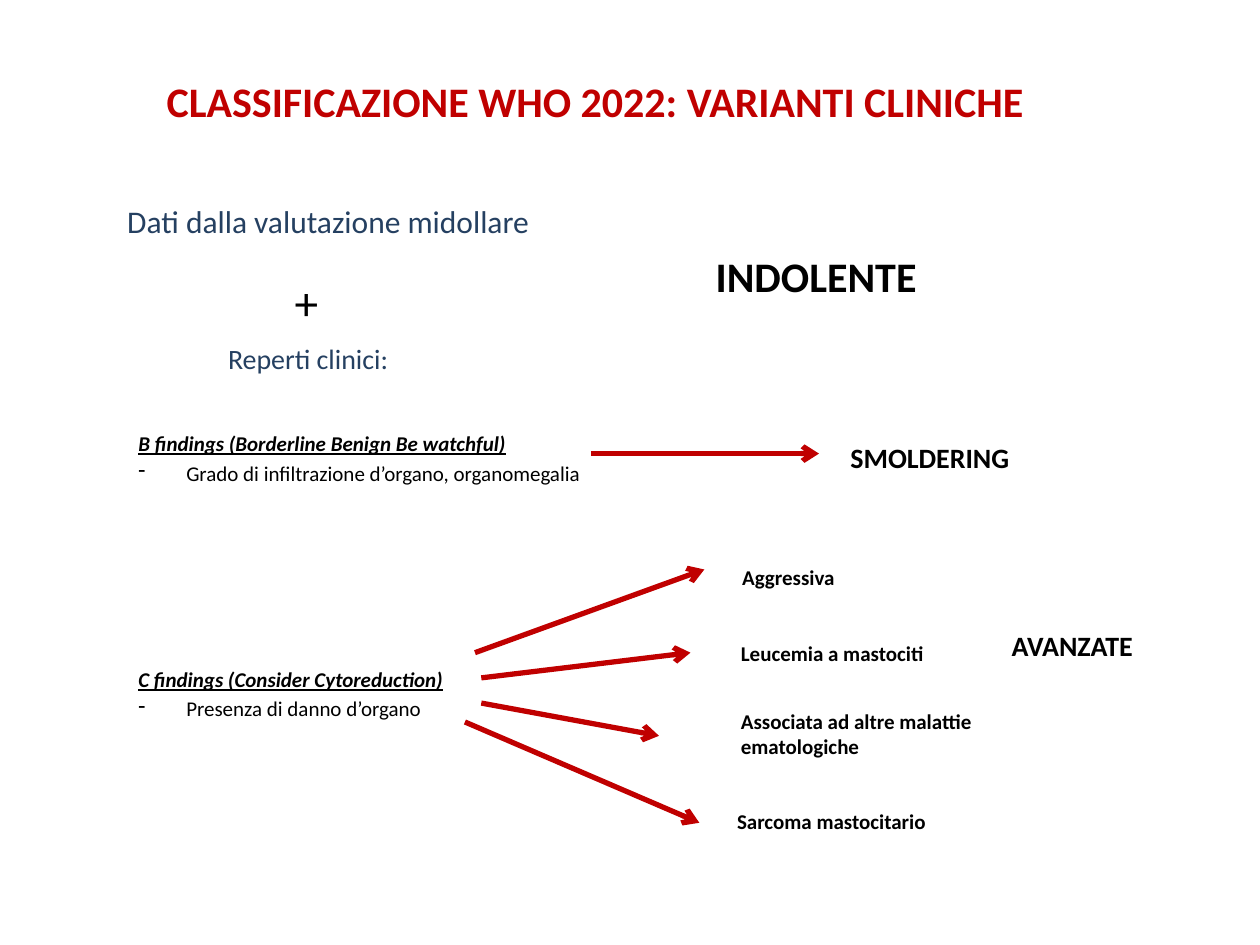
from lxml import etree
from pptx import Presentation, util as u
from pptx.dml.color import RGBColor
from pptx.enum import shapes, text
from pptx.oxml import ns

COLORS = {"red": "C00000", "navy": "254061", "black": "000000"}
FONT = "Calibri"
HANGING = 0.38

# Insets: left, top, right, bottom
STANDARD = (0.1, 0.05, 0.1, 0.05)
LABEL = (0.07, 0.04, 0.07, 0.04)
SHIFTED = (-0.04, -0.04, 0, 0)

TITLE = ("CLASSIFICAZIONE WHO 2022: VARIANTI CLINICHE", (1.05, 0.55, 7.35, 0.5))
PLUS = ("+", (2.24, 2.12, 0.39, 0.56))
INPUTS = [  # wording, box, size
    ("Dati dalla valutazione midollare", (1.05, 1.67, 3.78, 0.24), 18),
    ("Reperti clinici:", (1.85, 2.78, 1.78, 0.2), 16),
]
FINDINGS = [  # heading, detail, top
    ("B findings (Borderline Benign Be watchful)",
     "Grado di infiltrazione d’organo, organomegalia", 3.37),
    ("C findings (Consider Cytoreduction)", "Presenza di danno d’organo", 5.24),
]
VARIANTS = [  # wording, box, size, wraps
    ("INDOLENTE", (5.61, 1.95, 2.58, 0.48), 24, True),
    ("SMOLDERING", (6.68, 3.46, 1.43, 0.34), 16, False),
    ("AVANZATE", (7.96, 4.95, 1.13, 0.34), 16, False),
    ("Aggressiva", (5.82, 4.44, 0.89, 0.28), 12, False),
    ("Leucemia a mastociti", (5.81, 5.04, 1.62, 0.28), 12, False),
    ("Associata ad altre malattie ematologiche", (5.81, 5.58, 2.31, 0.48), 12, True),
    ("Sarcoma mastocitario", (5.78, 6.38, 1.66, 0.28), 12, False),
]
ARROWS = [  # start x, start y, end x, end y
    (4.69, 3.6, 6.5, 3.6),
    (3.77, 5.18, 5.59, 4.52),
    (3.82, 5.38, 5.48, 5.18),
    (3.82, 5.58, 5.23, 5.84),
    (3.69, 5.73, 5.55, 6.53),
]


def style(paragraph, size, color="black", **flags):
    font = paragraph.font
    font.name, font.size = FONT, u.Pt(size)
    font.color.rgb = RGBColor.from_string(COLORS[color])
    for name, value in flags.items():
        setattr(font, name, value)


def add_text(slide, wording, box, size, color="black", insets=STANDARD, wraps=True, **flags):
    """Add a one-paragraph text box; return its frame and paragraph."""
    frame = slide.shapes.add_textbox(*map(u.Inches, box)).text_frame
    frame.word_wrap = wraps
    frame.auto_size = text.MSO_AUTO_SIZE.SHAPE_TO_FIT_TEXT
    for side, inset in zip(("left", "top", "right", "bottom"), insets):
        setattr(frame, f"margin_{side}", u.Inches(inset))
    paragraph = frame.paragraphs[0]
    paragraph.text = wording
    style(paragraph, size, color, **flags)
    return frame, paragraph


def add_findings(slide, heading, detail, top):
    frame, _ = add_text(slide, heading, (1, top, 4.78, 0.55), 12,
                        bold=True, italic=True, underline=True)
    paragraph = frame.add_paragraph()
    paragraph.text = detail
    paragraph.space_before = u.Pt(2.4)
    properties = paragraph._p.get_or_add_pPr()
    properties.set("marL", str(u.Inches(HANGING)))
    properties.set("indent", str(u.Inches(-HANGING)))
    etree.SubElement(properties, ns.qn("a:buChar"), char="-")
    style(paragraph, 12)


def add_arrow(slide, *ends):
    arrow = slide.shapes.add_connector(shapes.MSO_CONNECTOR.STRAIGHT, *map(u.Inches, ends))
    arrow.line.width = u.Pt(3)
    arrow.line.color.rgb = RGBColor.from_string(COLORS["red"])
    etree.SubElement(arrow.line._get_or_add_ln(), ns.qn("a:tailEnd"), type="arrow")
    etree.SubElement(arrow._element.spPr, ns.qn("a:effectLst"))


def main():
    presentation = Presentation()
    presentation.slide_width, presentation.slide_height = u.Inches(10), u.Inches(7.5)
    slide = presentation.slides.add_slide(presentation.slide_layouts[6])

    _, title = add_text(slide, *TITLE, 24, "red", bold=True)
    title.alignment = text.PP_ALIGN.CENTER
    for wording, box, size in INPUTS:
        frame, paragraph = add_text(slide, wording, box, size, "navy", SHIFTED)
        frame.vertical_anchor = text.MSO_ANCHOR.MIDDLE
        paragraph.line_spacing = 0.9
    add_text(slide, *PLUS, 27, wraps=False)
    for findings in FINDINGS:
        add_findings(slide, *findings)
    for ends in ARROWS:
        add_arrow(slide, *ends)
    for wording, box, size, wraps in VARIANTS:
        add_text(slide, wording, box, size, insets=LABEL, wraps=wraps, bold=True)

    presentation.save("out.pptx")


if __name__ == "__main__":
    main()
